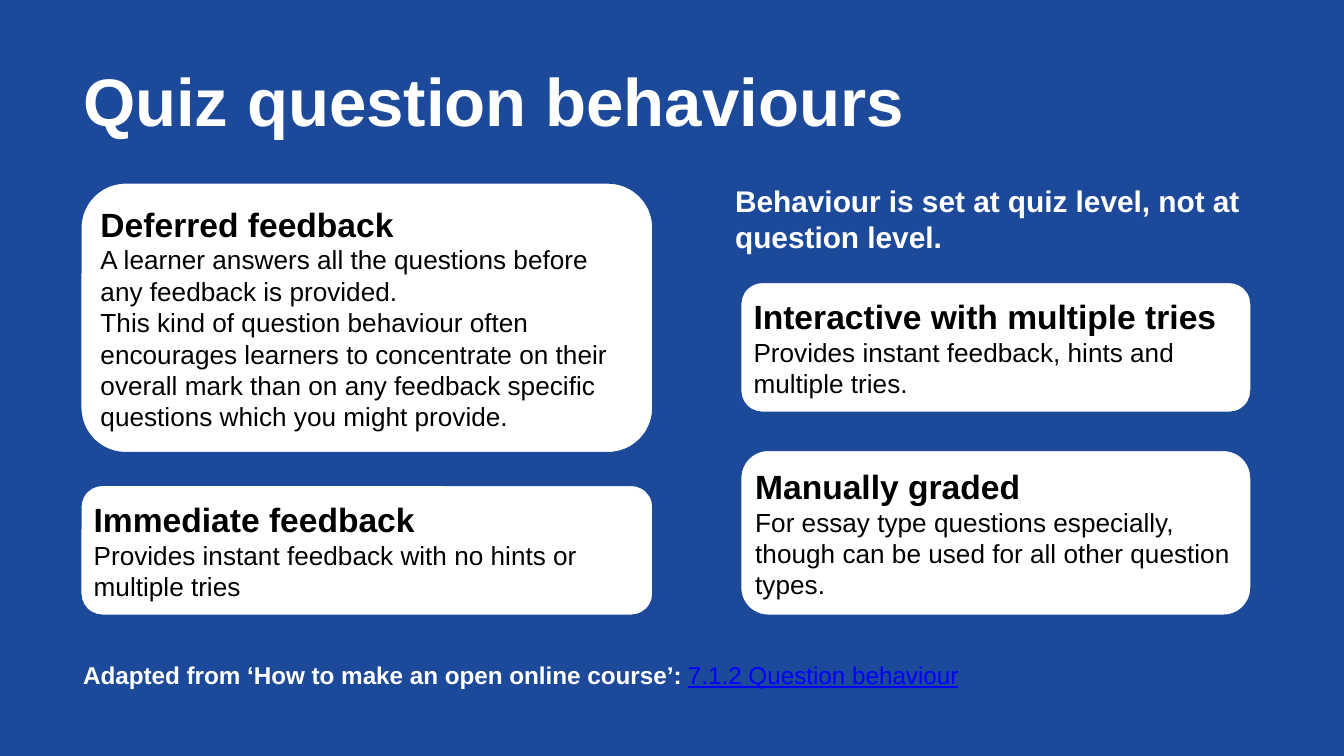
from copy import deepcopy
from dataclasses import dataclass

from pptx import Presentation
from pptx.dml.color import RGBColor
from pptx.enum.shapes import MSO_SHAPE
from pptx.enum.text import MSO_ANCHOR, PP_ALIGN
from pptx.slide import Slide
from pptx.text.text import TextFrame, _Paragraph
from pptx.util import Inches, Pt

ROUNDED = MSO_SHAPE.ROUNDED_RECTANGLE
MIDDLE = MSO_ANCHOR.MIDDLE
TOP = MSO_ANCHOR.TOP
LEFT = PP_ALIGN.LEFT

COLOURS = {"blue": "1D499B", "white": "FFFFFF", "black": "000000", "link": "0000FF"}
FONT = "Arial"
LEFT_COLUMN = (0.6, 4.26)
RIGHT_COLUMN = (5.51, 3.8)


@dataclass(frozen=True)
class Behaviour:
    column: tuple[float, float]
    top: float
    height: float
    heading: str
    details: tuple[str, ...]


@dataclass(frozen=True)
class Phrase:
    text: str
    size: float
    colour: str = "white"
    bold: bool = True
    underline: bool = False


BEHAVIOURS = [
    Behaviour(LEFT_COLUMN, 1.36, 2.01, "Deferred feedback", (
        "A learner answers all the questions before any feedback is provided. ",
        "This kind of question behaviour often encourages learners to concentrate "
        "on their overall mark than on any feedback specific questions which you "
        "might provide.",
    )),
    Behaviour(RIGHT_COLUMN, 2.1, 0.97, "Interactive with multiple tries", (
        "Provides instant feedback, hints and multiple tries.",
    )),
    Behaviour(LEFT_COLUMN, 3.61, 0.97, "Immediate feedback", (
        "Provides instant feedback with no hints or multiple tries",
    )),
    Behaviour(RIGHT_COLUMN, 3.35, 1.23, "Manually graded", (
        "For essay type questions especially, though can be used for all other "
        "question types.",
    )),
]


def rgb(name: str) -> RGBColor:
    return RGBColor.from_string(COLOURS[name])


def add_phrase(paragraph: _Paragraph, phrase: Phrase) -> None:
    run = paragraph.add_run()
    run.text = phrase.text
    run.font.name = FONT
    run.font.size = Pt(phrase.size)
    run.font.bold = phrase.bold
    run.font.underline = phrase.underline
    run.font.color.rgb = rgb(phrase.colour)


def break_line(paragraph: _Paragraph) -> None:
    run_format = paragraph.runs[-1]._r.rPr
    paragraph.add_line_break()
    paragraph._p[-1].append(deepcopy(run_format))


def set_insets(frame: TextFrame, inset: float) -> None:
    frame.margin_left = frame.margin_right = Inches(inset)
    frame.margin_top = frame.margin_bottom = Inches(0.05)


def add_text(slide: Slide, left: float, top: float, width: float, height: float,
             phrases: list[Phrase], inset: float = 0.1) -> TextFrame:
    frame = slide.shapes.add_textbox(
        Inches(left), Inches(top), Inches(width), Inches(height)).text_frame
    frame.word_wrap = True
    frame.vertical_anchor = TOP
    set_insets(frame, inset)
    for phrase in phrases:
        add_phrase(frame.paragraphs[0], phrase)
    return frame


def add_behaviour(slide: Slide, behaviour: Behaviour) -> None:
    left, width = behaviour.column
    card = slide.shapes.add_shape(
        ROUNDED, Inches(left), Inches(behaviour.top), Inches(width), Inches(behaviour.height))
    card.shadow.inherit = False
    card.fill.solid()
    card.fill.fore_color.rgb = rgb("white")
    card.line.color.rgb = rgb("blue")
    card.line.width = Pt(1)
    frame = card.text_frame
    frame.word_wrap = True
    frame.vertical_anchor = MIDDLE
    set_insets(frame, 0.05)
    paragraph = frame.paragraphs[0]
    paragraph.alignment = LEFT
    add_phrase(paragraph, Phrase(behaviour.heading, 18, "black"))
    for detail in behaviour.details:
        break_line(paragraph)
        add_phrase(paragraph, Phrase(detail, 14, "black", bold=False))


def main() -> None:
    presentation = Presentation()
    presentation.slide_width = Inches(10)
    presentation.slide_height = Inches(45) // 8
    slide = presentation.slides.add_slide(presentation.slide_layouts[6])
    slide.background.fill.solid()
    slide.background.fill.fore_color.rgb = rgb("blue")

    title = add_text(slide, 0.52, 0.46, 6.81, 0.47, [Phrase("Quiz question behaviours", 36)])
    title.paragraphs[0].line_spacing = 0.9
    add_text(slide, 0.52, 4.86, 8.96, 0.32, [
        Phrase("Adapted from ‘How to make an open online course’: ", 13),
        Phrase("7.1.2 Question behaviour", 13, "link", bold=False, underline=True),
    ])
    for behaviour in BEHAVIOURS:
        add_behaviour(slide, behaviour)
    add_text(slide, 5.42, 1.31, 3.98, 0.64, [
        Phrase("Behaviour is set at quiz level, not at question level.", 16),
    ], inset=0.05)
    presentation.save("out.pptx")


if __name__ == "__main__":
    main()
